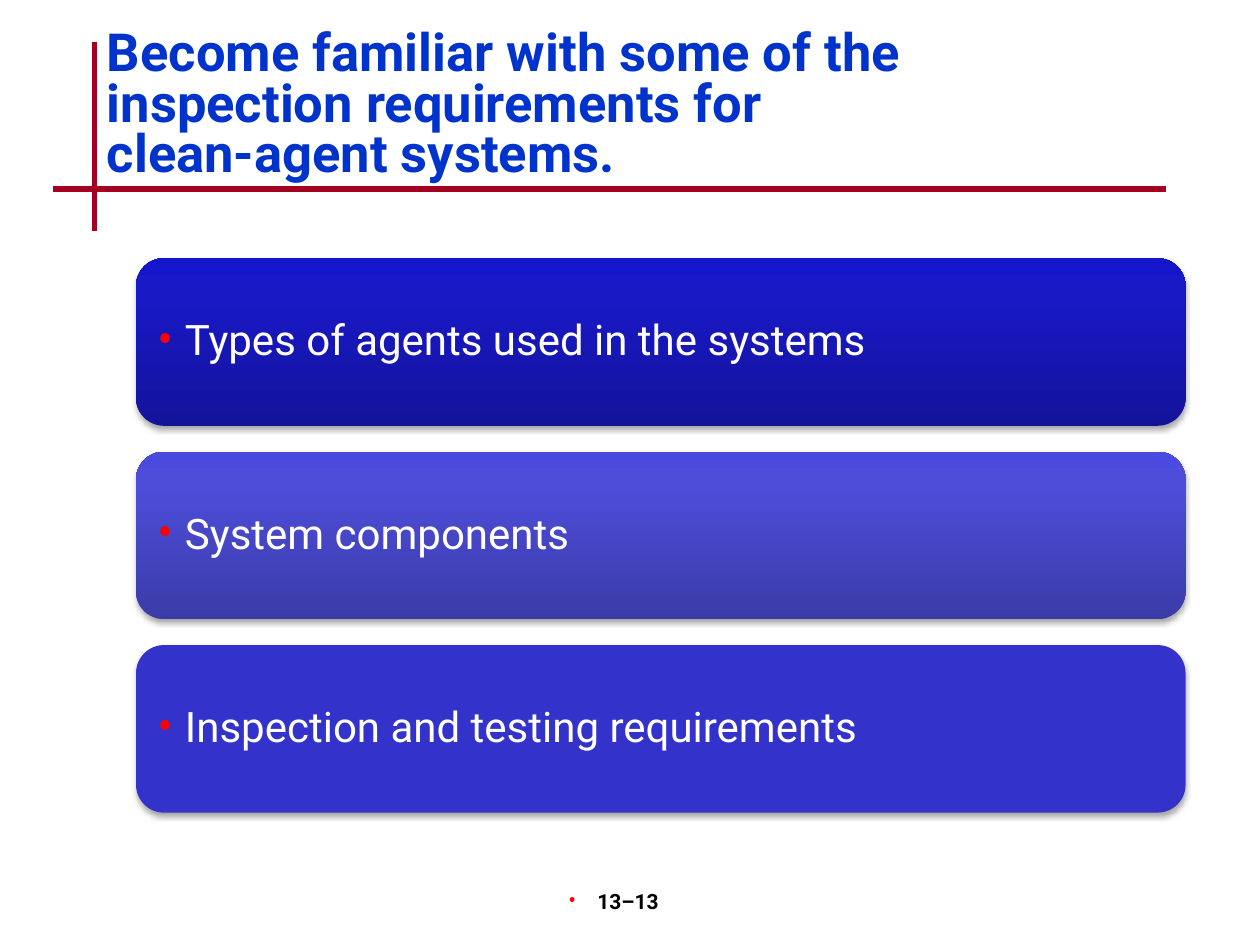
"""Build the slide on inspection requirements for clean-agent systems."""
import copy

import pptx
import pptx.dml.color
import pptx.enum.shapes
import pptx.enum.text
import pptx.oxml
import pptx.oxml.ns
import pptx.util
from pptx.util import Inches

FONT = "Roboto"
TITLE = "Become familiar with some of the inspection requirements for \vclean-agent systems."
TOPICS = [
    ("Types of agents used in the systems", ["13139A", "1919C8", "1515CC"]),
    ("System components", ["3B3BA8", "4D4DDA", "4A4ADE"]),
    ("Inspection and testing requirements", ["3333CC"]),
]
GRADIENT_POSITIONS = [0, 0.8, 1]
CARD_TOP = 2.05
CARD_PITCH = 1.535


def color(value):
    return pptx.dml.color.RGBColor.from_string(value)


def xml(tag, attributes="", content=""):
    namespace = pptx.oxml.ns.nsdecls("a")
    return pptx.oxml.parse_xml(f"<a:{tag} {namespace} {attributes}>{content}</a:{tag}>")


def add_rule(slide, start, end):
    line = slide.shapes.add_connector(
        pptx.enum.shapes.MSO_CONNECTOR.STRAIGHT, *map(Inches, start + end))
    line.line.color.rgb = color("A50021")
    line.line.width = pptx.util.Pt(3)
    line._element.spPr.append(xml("effectLst"))


def add_text(slide, box, text, size, font_color, bold=False):
    shape = slide.shapes.add_textbox(*map(Inches, box))
    frame = shape.text_frame
    frame.word_wrap = True
    frame.text = text
    for run in frame.paragraphs[0].runs:
        run.font.name = FONT
        run.font.size = pptx.util.Pt(size)
        run.font.bold = bold
        run.font.color.rgb = color(font_color)
    return frame


def add_bullet(paragraph, indent):
    properties = paragraph._p.get_or_add_pPr()
    properties.set("marL", str(Inches(indent)))
    properties.set("indent", str(-Inches(indent)))
    properties.append(xml("buClr", content='<a:srgbClr val="FF0000"/>'))
    properties.append(xml("buSzPct", 'val="110000"'))
    properties.append(xml("buFont", f'typeface="{FONT}"'))
    properties.append(xml("buChar", 'char="•"'))


def fill_card(shape, colors):
    if len(colors) == 1:
        shape.fill.solid()
        shape.fill.fore_color.rgb = color(colors[0])
        return
    shape.fill.gradient()
    shape.fill.gradient_angle = 90
    stop_list = shape._element.spPr.find(".//" + pptx.oxml.ns.qn("a:gsLst"))
    stop_list.append(copy.deepcopy(stop_list[-1]))
    for stop, position, value in zip(shape.fill.gradient_stops, GRADIENT_POSITIONS, colors):
        stop.position = position
        stop.color.rgb = color(value)


def add_shadow(shape):
    shape.shadow.inherit = False
    effects = shape._element.spPr.find(pptx.oxml.ns.qn("a:effectLst"))
    blur, distance = pptx.util.Pt(3.1), pptx.util.Pt(1.8)
    effects.append(xml(
        "outerShdw",
        f'blurRad="{blur}" dist="{distance}" dir="5400000" rotWithShape="0"',
        '<a:srgbClr val="000000"><a:alpha val="35000"/></a:srgbClr>'))


def add_card(slide, top, text, colors):
    shape = slide.shapes.add_shape(
        pptx.enum.shapes.MSO_SHAPE.ROUNDED_RECTANGLE,
        Inches(1.08), Inches(top), Inches(8.33), Inches(1.33))
    fill_card(shape, colors)
    shape.line.fill.background()
    add_shadow(shape)
    frame = add_text(slide, (1.15, top + 0.065, 8.2, 1.2), text, 24, "FFFFFF")
    frame.vertical_anchor = pptx.enum.text.MSO_ANCHOR.MIDDLE
    frame.margin_left = frame.margin_right = Inches(0.1)
    frame.margin_top = frame.margin_bottom = Inches(0.1)
    paragraph = frame.paragraphs[0]
    add_bullet(paragraph, 0.22)
    paragraph.line_spacing = 0.9
    paragraph.space_after = pptx.util.Pt(8.4)


def add_page_number(slide):
    frame = add_text(slide, (3.92, 7, 2.08, 0.5), "13–13", 12, "000000", bold=True)
    frame.margin_left, frame.margin_right = 0, Inches(0.18)
    paragraph = frame.paragraphs[0]
    add_bullet(paragraph, 0.23)
    paragraph.alignment = pptx.enum.text.PP_ALIGN.CENTER


def main():
    presentation = pptx.Presentation()
    presentation.slide_width = Inches(10)
    presentation.slide_height = Inches(7.5)
    slide = presentation.slides.add_slide(presentation.slide_layouts[6])
    add_rule(slide, (0.75, 0.33), (0.75, 1.83))
    add_rule(slide, (0.42, 1.5), (9.25, 1.5))
    add_page_number(slide)
    title = add_text(slide, (0.75, 0.2, 8.5, 1), TITLE, 30, "0033CC", bold=True)
    title.paragraphs[0].line_spacing = 0.8
    for index, (text, colors) in enumerate(TOPICS):
        add_card(slide, CARD_TOP + index * CARD_PITCH, text, colors)
    presentation.save("out.pptx")


if __name__ == "__main__":
    main()
